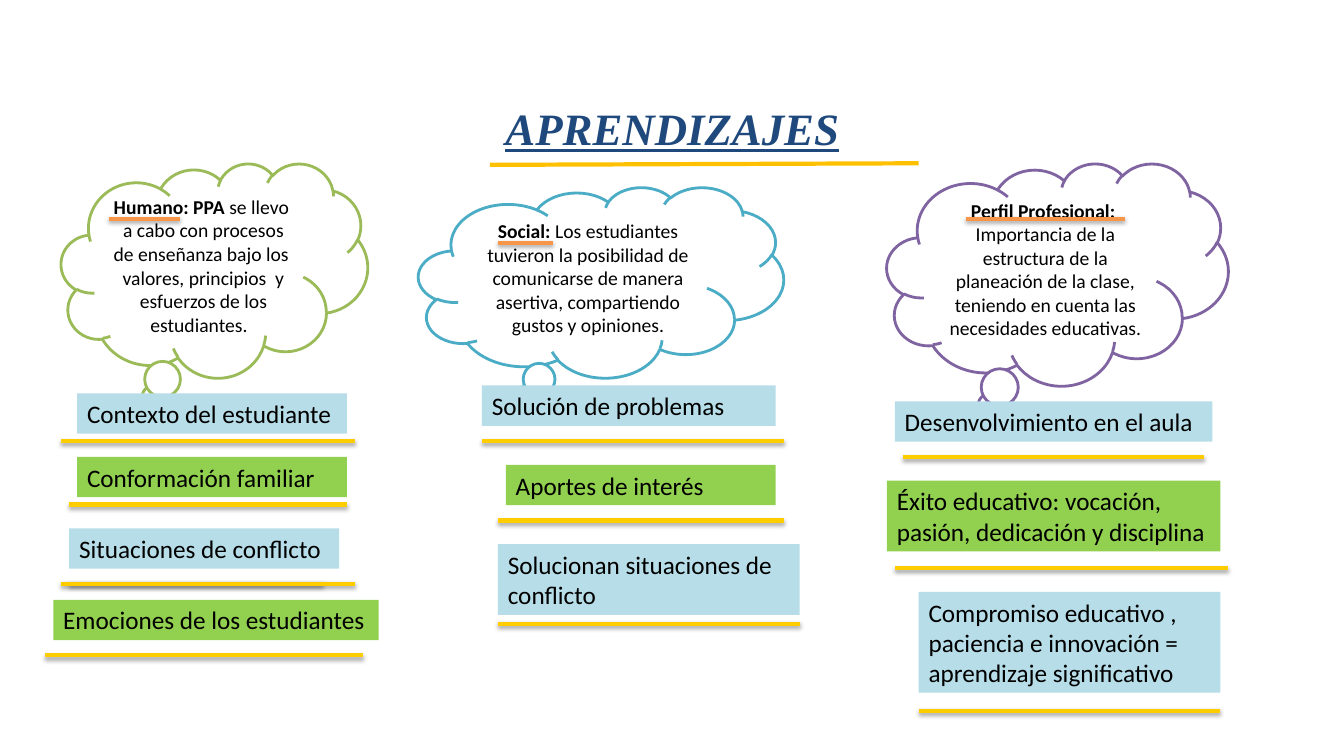
import pptx
import pptx.util
import pptx.dml.color
import pptx.enum.shapes
import pptx.enum.text
import pptx.oxml
import pptx.oxml.ns

COLORS = {
    "title": "1F497D", "text": "000000", "white": "FFFFFF",
    "gold": "FFC000", "yellow": "FFCC00", "orange": "F79646",
    "blue": "B7DEE8", "lime": "92D050",
    "green": "9BBB59", "teal": "4BACC6", "purple": "8064A2",
}
CELL = pptx.util.Mm(2)
LEFT = pptx.util.Inches(0.45)
TOP = pptx.util.Inches(1.62)
ALIGN = pptx.enum.text.PP_ALIGN
ANCHOR = pptx.enum.text.MSO_ANCHOR
SHADOW = (
    '<a:effectLst {}><a:outerShdw blurRad="39370" dist="22860" dir="5400000" '
    'rotWithShape="0"><a:srgbClr val="{}"><a:alpha val="35000"/></a:srgbClr>'
    '</a:outerShdw></a:effectLst>'
)

COLUMNS = [
    {
        "column": 0, "cloud": (2, 0, 38.6, 27), "outline": "green",
        "heading": "Humano: PPA ",
        "body": "se llevo  a cabo con procesos de enseñanza bajo los  valores, "
                "principios  y esfuerzos de los estudiantes.  ",
        "mark": (8, 17, 7),
        "labels": [
            ("Contexto del estudiante", 4, 29, 34, 1),
            ("Conformación familiar", 4, 37, 34, 1),
            ("Situaciones de conflicto", 3, 46, 34, 1),
            ("Emociones de los estudiantes", 1, 55, 41, 1),
        ],
        "rules": [(2, 39, 35), (3, 38, 43), (3, 35, 53), (2, 39, 53), (0, 40, 62)],
    },
    {
        "column": 47, "cloud": (0, 3, 46, 24), "outline": "teal",
        "heading": "Social:",
        "body": " Los estudiantes tuvieron la posibilidad de comunicarse de manera "
                "asertiva, compartiendo gustos y opiniones.",
        "mark": (10, 17, 10),
        "labels": [
            ("Solución de problemas", 8, 28, 37, 1),
            ("Aportes de interés", 11, 38, 34, 1),
            ("Solucionan situaciones de conflicto", 10, 48, 38, 2),
        ],
        "rules": [(8, 46, 35), (10, 46, 45), (10, 48, 58)],
    },
    {
        "column": 106, "cloud": (0, 0, 43, 28), "outline": "purple",
        "heading": "Perfil Profesional:  ",
        "body": "Importancia de la estructura de la planeación de la clase, "
                "teniendo en cuenta las necesidades educativas.",
        "mark": (10, 30, 7),
        "labels": [
            ("Desenvolvimiento en el aula", 1, 30, 40, 1),
            ("Éxito educativo: vocación, pasión, dedicación y disciplina", 0, 40, 42, 2),
            ("Compromiso educativo , paciencia e innovación = aprendizaje significativo",
             4, 54, 38, 3),
        ],
        "rules": [(2, 40, 37), (1, 43, 51), (4, 42, 69)],
    },
]


def rgb(name):
    return pptx.dml.color.RGBColor.from_string(COLORS[name])


def across(column):
    return int(LEFT + column * CELL)


def down(row):
    return int(TOP + row * CELL)


def add_text(para, text, size=18, font="Calibri", color="text",
             bold=False, italic=False, underline=False):
    span = para.add_run()
    span.text = text
    span.font.size = pptx.util.Pt(size)
    span.font.name = font
    span.font.color.rgb = rgb(color)
    span.font.bold = bold
    span.font.italic = italic
    span.font.underline = underline


def add_rule(page, start, end, color, shadow=True):
    line = page.shapes.add_connector(
        pptx.enum.shapes.MSO_CONNECTOR.STRAIGHT,
        across(start[0]), down(start[1]), across(end[0]), down(end[1]))
    line.line.color.rgb = rgb(color)
    line.line.width = pptx.util.Pt(3)
    namespace = pptx.oxml.ns.nsdecls("a")
    effect = SHADOW.format(namespace, COLORS["text"]) if shadow else f"<a:effectLst {namespace}/>"
    line._element.spPr.append(pptx.oxml.parse_xml(effect))


def add_title(page):
    title = page.shapes.title
    title.left, title.top = pptx.util.Inches(2.17), pptx.util.Inches(0.99)
    title.width, title.height = pptx.util.Inches(9), pptx.util.Inches(0.55)
    title.text_frame.vertical_anchor = ANCHOR.MIDDLE
    para = title.text_frame.paragraphs[0]
    para.alignment = ALIGN.CENTER
    add_text(para, "APRENDIZAJES", size=32, font="Times New Roman", color="title",
             bold=True, italic=True, underline=True)
    add_rule(page, (56, 0.2), (110, 0), "gold", shadow=False)


def add_cloud(page, column, row, width, height, outline, heading, body):
    cloud = page.shapes.add_shape(
        pptx.enum.shapes.MSO_SHAPE.CLOUD_CALLOUT,
        across(column), down(row), int(width * CELL), int(height * CELL))
    cloud.shadow.inherit = False
    cloud.fill.solid()
    cloud.fill.fore_color.rgb = rgb("white")
    cloud.line.color.rgb = rgb(outline)
    cloud.line.width = pptx.util.Pt(2)
    cloud.text_frame.word_wrap = True
    cloud.text_frame.vertical_anchor = ANCHOR.MIDDLE
    para = cloud.text_frame.paragraphs[0]
    para.alignment = ALIGN.CENTER
    add_text(para, heading, size=14, bold=True)
    add_text(para, body, size=14)


def add_label(page, text, column, row, width, lines, fill):
    height = pptx.util.Inches(0.1 + 0.3 * lines)
    box = page.shapes.add_textbox(across(column), down(row), int(width * CELL), height)
    box.fill.solid()
    box.fill.fore_color.rgb = rgb(fill)
    box.text_frame.word_wrap = True
    box.text_frame.auto_size = pptx.enum.text.MSO_AUTO_SIZE.SHAPE_TO_FIT_TEXT
    add_text(box.text_frame.paragraphs[0], text)


def add_column(page, column, cloud, outline, heading, body, mark, labels, rules):
    shift, row, width, height = cloud
    add_cloud(page, column + shift, row, width, height, outline, heading, body)
    for index, (text, shift, row, width, lines) in enumerate(labels):
        add_label(page, text, column + shift, row, width, lines, ("blue", "lime")[index % 2])
    colored = [(rule, "yellow") for rule in rules] + [(mark, "orange")]
    for (start, end, row), color in colored:
        add_rule(page, (column + start, row), (column + end, row), color)


def main():
    deck = pptx.Presentation()
    deck.slide_width = pptx.util.Inches(13.33)
    deck.slide_height = pptx.util.Inches(7.5)
    page = deck.slides.add_slide(deck.slide_layouts[5])
    add_title(page)
    for column in COLUMNS:
        add_column(page, **column)
    deck.save("out.pptx")


if __name__ == "__main__":
    main()
